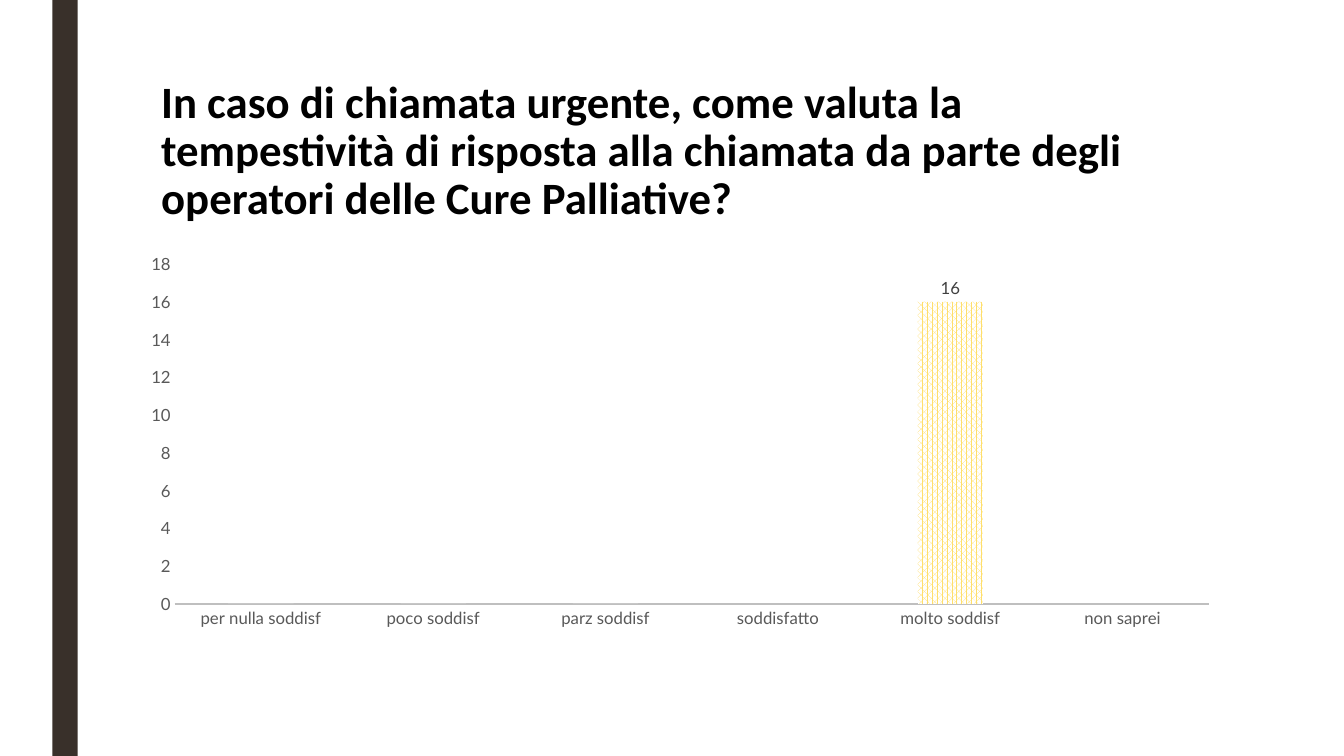
from lxml import etree
from pptx import Presentation
from pptx.chart.data import CategoryChartData
from pptx.dml.color import RGBColor
from pptx.enum.chart import XL_CHART_TYPE, XL_LABEL_POSITION, XL_TICK_MARK
from pptx.enum.dml import MSO_PATTERN
from pptx.enum.shapes import MSO_SHAPE
from pptx.enum.text import MSO_ANCHOR
from pptx.oxml.ns import qn
from pptx.util import Inches, Pt

COLORS = {
    "band": "39302A",
    "title": "000000",
    "axis_text": "595959",
    "axis_line": "BFBFBF",
    "label": "404040",
    "bar": "FFDF6B",
    "white": "FFFFFF",
}


def color(name):
    return RGBColor.from_string(COLORS[name])


def style_font(font, name, size, color_name):
    font.name = name
    font.size = Pt(size)
    font.color.rgb = color(color_name)


presentation = Presentation()
presentation.slide_width = Inches(13.33)
presentation.slide_height = Inches(7.5)
slide = presentation.slides.add_slide(presentation.slide_layouts[6])

band = slide.shapes.add_shape(
    MSO_SHAPE.RECTANGLE, Inches(0.52), Inches(0), Inches(0.25), Inches(7.5)
)
band.shadow.inherit = False
band.fill.solid()
band.fill.fore_color.rgb = color("band")
band.line.fill.background()

title = slide.shapes.add_textbox(Inches(1.5), Inches(0.75), Inches(10.5), Inches(1.62))
title.text_frame.word_wrap = True
title.text_frame.vertical_anchor = MSO_ANCHOR.TOP
paragraph = title.text_frame.paragraphs[0]
paragraph.text = (
    "In caso di chiamata urgente, come valuta la tempestività di risposta "
    "alla chiamata da parte degli operatori delle Cure Palliative?"
)
paragraph.line_spacing = 0.89
style_font(paragraph.font, "Calibri", 32, "title")
paragraph.font.bold = True

chart_data = CategoryChartData()
chart_data.categories = [
    "per nulla soddisf",
    "poco soddisf",
    "parz soddisf",
    "soddisfatto",
    "molto soddisf",
    "non saprei",
]
chart_data.add_series("Series 1", [0, 0, 0, None, 16, None])
chart = slide.shapes.add_chart(
    XL_CHART_TYPE.COLUMN_CLUSTERED,
    Inches(1.5), Inches(2.5), Inches(10.5), Inches(3.92),
    chart_data,
).chart
chart.has_title = False
chart.has_legend = False
style_font(chart.font, "Lato", 10, "title")

for axis in (chart.category_axis, chart.value_axis):
    axis.major_tick_mark = XL_TICK_MARK.NONE
    axis.minor_tick_mark = XL_TICK_MARK.NONE
    axis.has_major_gridlines = False
    style_font(axis.tick_labels.font, "Lato", 12, "axis_text")
chart.category_axis.format.line.color.rgb = color("axis_line")
chart.category_axis.format.line.width = Pt(1.5)
chart.value_axis.format.line.fill.background()
chart.value_axis.minimum_scale = 0
chart.value_axis.maximum_scale = 18
chart.value_axis.major_unit = 2

plot = chart.plots[0]
plot.vary_by_categories = False
plot.gap_width = 164
plot.overlap = -22
bar_fill = plot.series[0].format.fill
bar_fill.patterned()
bar_fill.pattern = MSO_PATTERN.PERCENT_70
bar_fill.fore_color.rgb = color("bar")
bar_fill.back_color.rgb = color("white")

plot.has_data_labels = True
labels = plot.data_labels
labels.show_value = True
labels.number_format = "0;;"
labels.number_format_is_linked = False
labels.position = XL_LABEL_POSITION.OUTSIDE_END
style_font(labels.font, "Lato", 12, "label")

plot_area = chart.element.find(".//" + qn("c:plotArea"))
for old_layout in plot_area.findall(qn("c:layout")):
    plot_area.remove(old_layout)
layout = etree.Element(qn("c:layout"))
plot_area.insert(0, layout)
manual_layout = etree.SubElement(layout, qn("c:manualLayout"))
for tag, value in (
    ("layoutTarget", "inner"),
    ("xMode", "edge"),
    ("yMode", "edge"),
    ("x", "0.02"),
    ("y", "0.03"),
    ("w", "0.98"),
    ("h", "0.86"),
):
    etree.SubElement(manual_layout, qn(f"c:{tag}")).set("val", value)

presentation.save("out.pptx")
